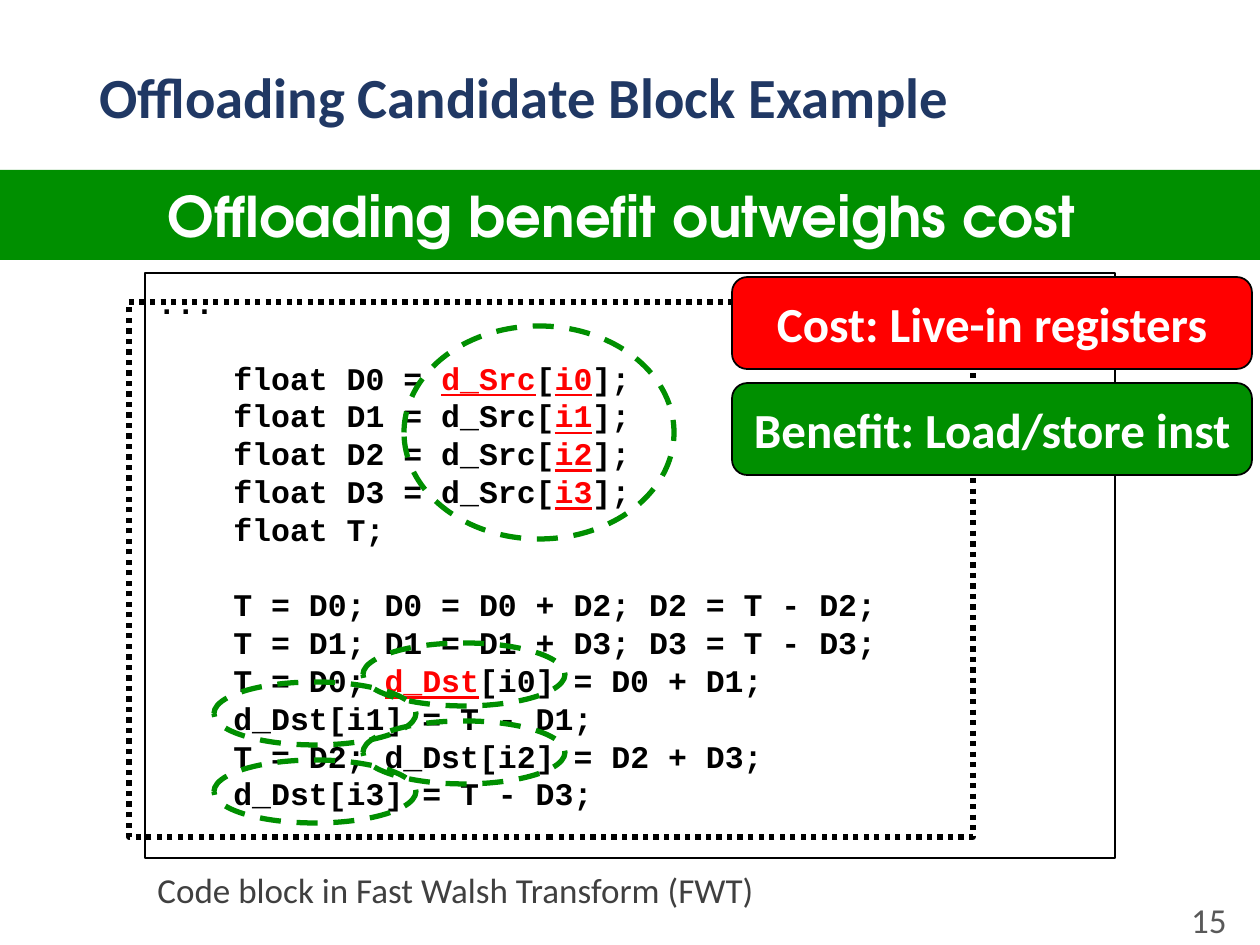
from dataclasses import dataclass
from typing import Optional

from pptx import Presentation
from pptx.dml.color import RGBColor
from pptx.enum.dml import MSO_LINE
from pptx.enum.shapes import MSO_SHAPE
from pptx.enum.text import MSO_ANCHOR, PP_ALIGN
from pptx.util import Emu, Pt

SCALE = 914400 / 126
HEX = {
    "navy": "203864", "gray": "595959", "dark": "404040", "black": "000000",
    "white": "FFFFFF", "red": "FF0000", "green": "008F00",
}
PITCH = Pt(21.6)
INDENT = 76
# Parts between bars are marked red; an empty string is a one-line gap.
CODE = """...

float D0 = |d_Src|[|i0|];
float D1 = d_Src[|i1|];
float D2 = d_Src[|i2|];
float D3 = d_Src[|i3|];
float T;

T = D0; D0 = D0 + D2; D2 = T - D2;
T = D1; D1 = D1 + D3; D3 = T - D3;
T = D0; |d_Dst|[i0] = D0 + D1;
d_Dst[i1] = T - D1;
T = D2; d_Dst[i2] = D2 + D3;
d_Dst[i3] = T - D3;""".split("\n")


@dataclass
class Box:
    left: int
    top: int
    width: int
    height: int


@dataclass
class Style:
    size: float
    color: str
    bold: bool = False
    face: str = "Calibri"
    align: PP_ALIGN = PP_ALIGN.LEFT
    anchor: MSO_ANCHOR = MSO_ANCHOR.MIDDLE


@dataclass
class Edge:
    color: str
    width: float
    dash: Optional[MSO_LINE] = None


def px(count: int) -> Emu:
    return Emu(round(count * SCALE))


def place(box: Box) -> tuple:
    return px(box.left), px(box.top), px(box.width), px(box.height)


def rgb(name: str) -> RGBColor:
    return RGBColor.from_string(HEX[name])


def set_font(para, style: Style) -> None:
    para.alignment = style.align
    font = para.font
    font.name, font.size, font.bold = style.face, Pt(style.size), style.bold
    font.color.rgb = rgb(style.color)


def write(shape, text: str, style: Style):
    frame = shape.text_frame
    frame.word_wrap = True
    frame.vertical_anchor = style.anchor
    para = frame.paragraphs[0]
    para.text = text
    set_font(para, style)
    return para


def add_text(slide, box: Box, text: str, style: Style):
    return write(slide.shapes.add_textbox(*place(box)), text, style)


def add_shape(slide, kind: MSO_SHAPE, box: Box, fill: Optional[str] = None,
              edge: Optional[Edge] = None):
    shape = slide.shapes.add_shape(kind, *place(box))
    shape.shadow.inherit = False
    if fill:
        shape.fill.solid()
        shape.fill.fore_color.rgb = rgb(fill)
    else:
        shape.fill.background()
    if edge:
        shape.line.color.rgb = rgb(edge.color)
        shape.line.width = Pt(edge.width)
        if edge.dash:
            shape.line.dash_style = edge.dash
    else:
        shape.line.fill.background()
    return shape


def add_code(slide, box: Box) -> None:
    """Draw the framed listing, with gaps as spacing and marked parts in red."""
    style = Style(18, "black", True, "Courier New")
    frame = add_shape(slide, MSO_SHAPE.RECTANGLE, box,
                      edge=Edge("black", 0.75)).text_frame
    frame.word_wrap = True
    frame.vertical_anchor = MSO_ANCHOR.TOP
    frame.margin_top = px(10)
    for row, line in enumerate(CODE):
        if not line:
            continue
        para = frame.add_paragraph() if row else frame.paragraphs[0]
        set_font(para, style)
        para.line_spacing = PITCH
        if row:
            para._p.get_or_add_pPr().set("marL", str(px(INDENT)))
            if not CODE[row - 1]:
                para.space_before = PITCH
        for part, text in enumerate(line.split("|")):
            run = para.add_run()
            run.text = text
            if part % 2:
                run.font.color.rgb = rgb("red")
                run.font.underline = True


def main() -> None:
    deck = Presentation()
    deck.slide_width, deck.slide_height = px(1260), px(945)
    slide = deck.slides.add_slide(deck.slide_layouts[6])

    title = add_text(slide, Box(87, 50, 1086, 100),
                     "Offloading Candidate Block Example",
                     Style(32.4, "navy", True))
    title.line_spacing = 0.9
    add_text(slide, Box(955, 895, 284, 50), "15",
             Style(20, "gray", align=PP_ALIGN.RIGHT))
    add_code(slide, Box(145, 273, 970, 585))

    loop = Edge("green", 3, MSO_LINE.DASH)
    rings = [Box(404, 326, 270, 213)]
    rings += [Box((363, 214)[i % 2], 643 + 39 * i, 202, 63) for i in range(4)]
    for ring in rings:
        add_shape(slide, MSO_SHAPE.OVAL, ring, edge=loop)
    add_shape(slide, MSO_SHAPE.RECTANGLE, Box(129, 302, 844, 535),
              edge=Edge("black", 3, MSO_LINE.ROUND_DOT))

    banner = add_shape(slide, MSO_SHAPE.RECTANGLE, Box(0, 170, 1260, 90), "green")
    write(banner, "Offloading benefit outweighs cost ",
          Style(32, "white", True, "TeX Gyre Adventor", PP_ALIGN.CENTER))

    label = Style(28, "white", True, align=PP_ALIGN.CENTER)
    cards = [("Cost: Live-in registers", "red"),
             ("Benefit: Load/store inst", "green")]
    for i, (text, fill) in enumerate(cards):
        card = add_shape(slide, MSO_SHAPE.ROUNDED_RECTANGLE,
                         Box(732, 277 + 106 * i, 520, 92), fill, Edge("black", 1))
        write(card, text, label)

    add_text(slide, Box(145, 862, 701, 55),
             "Code block in Fast Walsh Transform (FWT)",
             Style(20, "dark", anchor=MSO_ANCHOR.TOP))
    deck.save("out.pptx")


if __name__ == "__main__":
    main()
